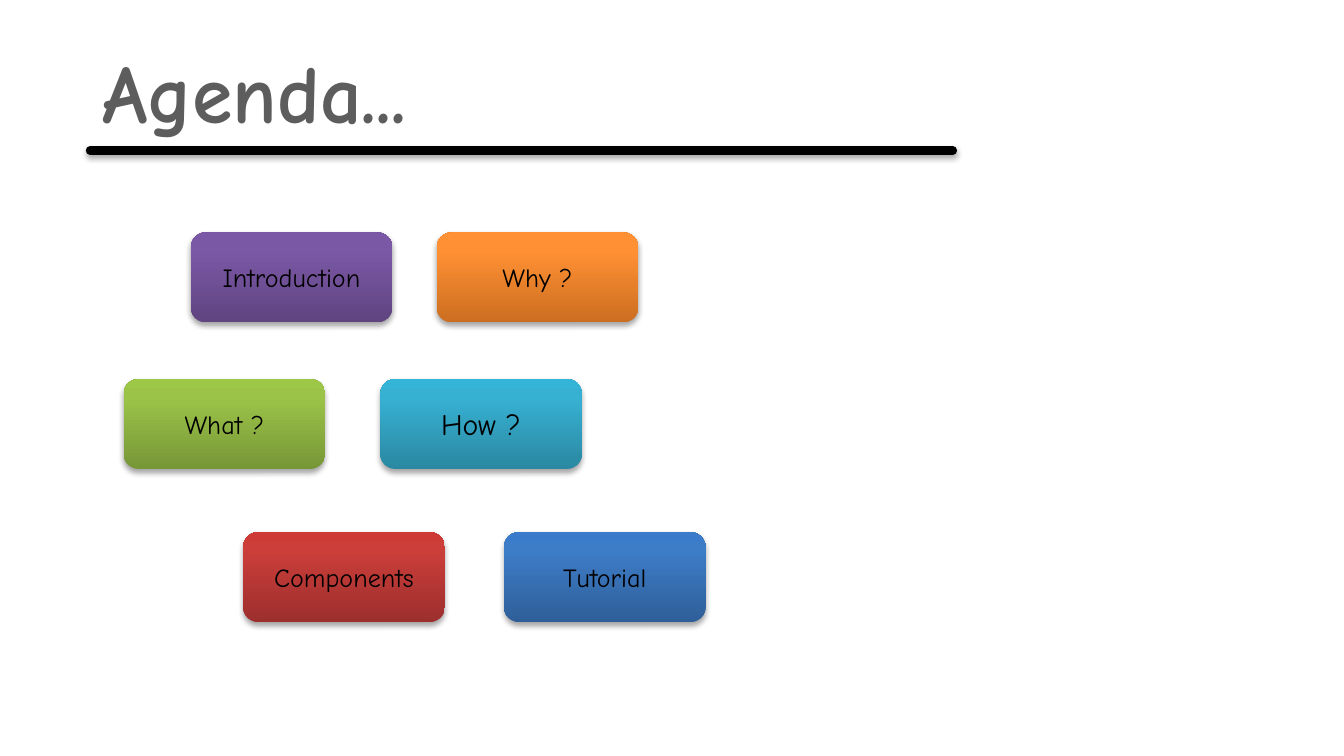
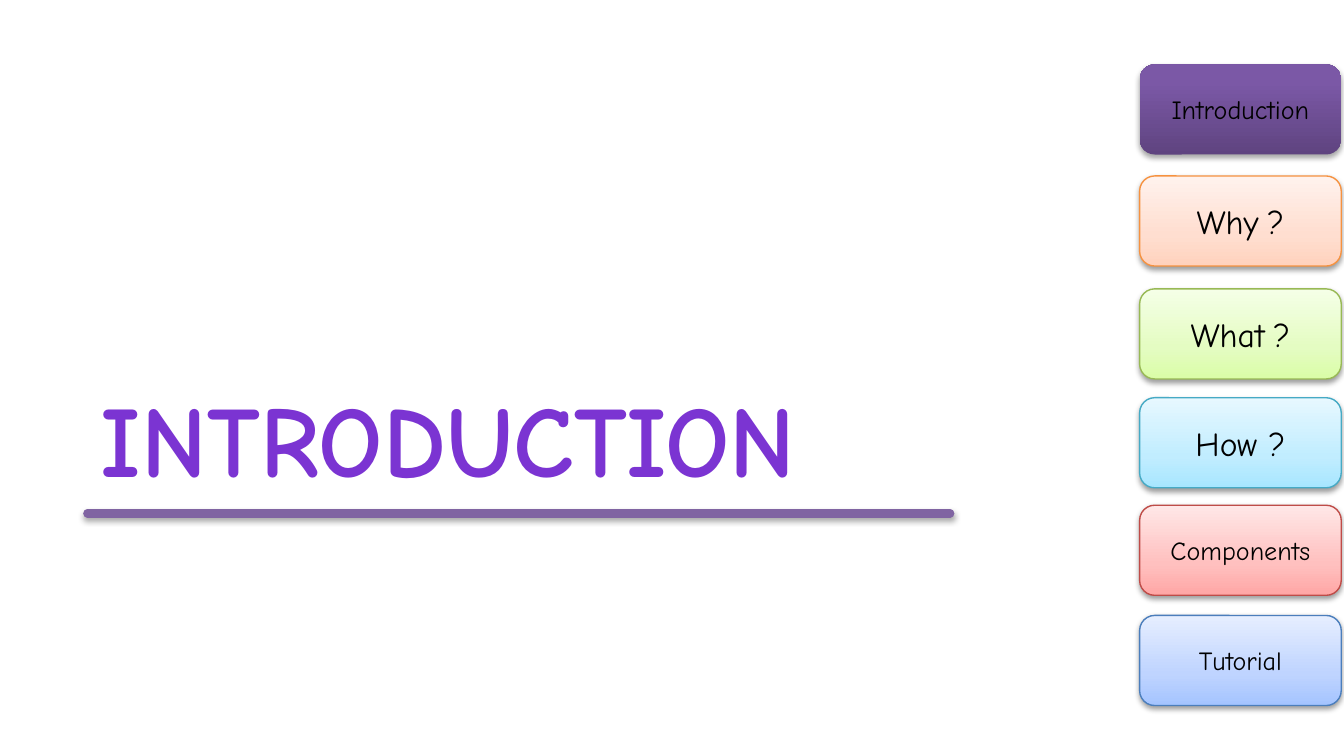
from copy import deepcopy

from lxml import etree
from pptx import Presentation
from pptx.dml.color import RGBColor
from pptx.enum.shapes import MSO_CONNECTOR, MSO_SHAPE
from pptx.enum.text import MSO_ANCHOR, MSO_AUTO_SIZE, PP_ALIGN
from pptx.oxml.ns import qn
from pptx.util import Inches, Pt

STRAIGHT = MSO_CONNECTOR.STRAIGHT
ROUNDED = MSO_SHAPE.ROUNDED_RECTANGLE
TOP, MIDDLE = MSO_ANCHOR.TOP, MSO_ANCHOR.MIDDLE
LEFT, CENTER = PP_ALIGN.LEFT, PP_ALIGN.CENTER
GROW = MSO_AUTO_SIZE.SHAPE_TO_FIT_TEXT

SLIDE_WIDTH = Inches(10)
SLIDE_HEIGHT = SLIDE_WIDTH * 9 // 16

FONT = "Comic Neue"
BLACK = RGBColor(0x00, 0x00, 0x00)
GRAY = RGBColor(0x5D, 0x5D, 0x5D)
VIOLET = RGBColor(0x7B, 0x34, 0xD2)
MUTED_VIOLET = RGBColor(0x80, 0x64, 0xA2)

STRONG_STOPS = (0, 0.8, 1)
PALE_STOPS = (0, 0.35, 1)


def palette(*codes):
    return [RGBColor.from_string(code) for code in codes]


STRONG = {
    "Introduction": palette("5F4480", "7B58A6", "7C57A8"),
    "Why ?": palette("CC6E20", "FF9034", "FF9136"),
    "What ?": palette("779737", "9BC348", "9DC746"),
    "How ?": palette("2A88A2", "37B1D2", "34B4D6"),
    "Components": palette("9C2F2D", "CB3E3A", "CE3B37"),
    "Tutorial": palette("2F5F99", "3D7CC7", "3A7CCB"),
}
PALE = {
    "Why ?": palette("FFD2BD", "FFDED0", "FFF2ED"),
    "What ?": palette("DAFDA7", "E4FCC2", "F5FFE7"),
    "How ?": palette("A7E6FF", "C1EDFF", "E7F8FF"),
    "Components": palette("FFA6A5", "FFC0BF", "FFE7E7"),
    "Tutorial": palette("A4C4FF", "BFD4FF", "E6EEFF"),
}
BORDER = dict(zip(PALE, palette("F69240", "98B955", "46AAC5", "BF4C48", "4B7EBC")))

AGENDA = [
    ([("Why ?", 14)], 3.25, 1.73),
    ([("Introduction", 14)], 1.42, 1.73),
    ([("How ?", 16)], 2.83, 2.82),
    ([("What ?", 14)], 0.92, 2.82),
    ([("Components", 14)], 1.81, 3.96),
    ([("Tutorial", 14)], 3.75, 3.96),
]
MENU_LEFT = 8.48
MENU = [
    ([("Introduction", 14)], 0.48),
    ([("Why", 18), (" ", 14), ("?", 18)], 1.31),
    ([("How ?", 18)], 2.96),
    ([("What", 18), (" ", 14), ("?", 18)], 2.15),
    ([("Components", 14)], 3.76),
    ([("Tutorial", 14)], 4.58),
]
CURRENT_TOPIC = "Introduction"
BUTTON_WIDTH, BUTTON_HEIGHT = 1.5, 0.67
RULE_LENGTH = 6.42


def cast_shadow(part, distance=1.8, opacity=35):
    effects = etree.SubElement(part._element.spPr, qn("a:effectLst"))
    outer = etree.SubElement(
        effects, qn("a:outerShdw"), blurRad=str(Pt(3.1)), dist=str(Pt(distance)),
        dir="5400000", rotWithShape="0")
    black = etree.SubElement(outer, qn("a:srgbClr"), val="000000")
    etree.SubElement(black, qn("a:alpha"), val=str(opacity * 1000))


def fill_gradient(button, colors, positions):
    button.fill.gradient()
    button.fill.gradient_angle = 90
    stop_list = button._element.spPr.find(".//" + qn("a:gsLst"))
    stop_list.insert(1, deepcopy(stop_list[0]))
    for stop, color, position in zip(button.fill.gradient_stops, colors, positions):
        stop.color.rgb = color
        stop.position = position


def format_run(run, size, color, bold=False):
    run.font.name = FONT
    run.font.size = Pt(size)
    run.font.bold = bold
    run.font.color.rgb = color


def add_button(slide, label, left, top, pale=False):
    topic = "".join(words for words, size in label)
    button = slide.shapes.add_shape(
        ROUNDED, Inches(left), Inches(top), Inches(BUTTON_WIDTH), Inches(BUTTON_HEIGHT))
    if pale:
        fill_gradient(button, PALE[topic], PALE_STOPS)
        button.line.color.rgb = BORDER[topic]
        button.line.width = Pt(0.75)
        cast_shadow(button, 1.6, 38)
    else:
        fill_gradient(button, STRONG[topic], STRONG_STOPS)
        button.line.fill.background()
        cast_shadow(button)
    button.text_frame.vertical_anchor = MIDDLE
    paragraph = button.text_frame.paragraphs[0]
    paragraph.alignment = CENTER
    for words, size in label:
        run = paragraph.add_run()
        run.text = words
        format_run(run, size, BLACK)


def add_titled_slide(deck, heading, box, size, color, rule_start, rule_color):
    slide = deck.slides.add_slide(deck.slide_layouts[5])
    title = slide.shapes.title
    title.left, title.top, title.width, title.height = map(Inches, box)
    frame = title.text_frame
    frame.text = heading
    frame.word_wrap = True
    frame.auto_size = GROW
    frame.vertical_anchor = TOP
    frame.paragraphs[0].alignment = LEFT
    format_run(frame.paragraphs[0].runs[0], size, color, bold=True)

    left, top = rule_start
    rule = slide.shapes.add_connector(
        STRAIGHT, Inches(left), Inches(top), Inches(left + RULE_LENGTH), Inches(top))
    rule.line.color.rgb = rule_color
    rule.line.width = Pt(4.5)
    rule.line._ln.set("cap", "rnd")
    cast_shadow(rule)
    return slide


def main():
    deck = Presentation()
    deck.slide_width, deck.slide_height = SLIDE_WIDTH, SLIDE_HEIGHT

    agenda = add_titled_slide(
        deck, "Agenda...", (0.66, 0.26, 5.41, 0.84), 44, GRAY, (0.67, 1.12), BLACK)
    for label, left, top in AGENDA:
        add_button(agenda, label, left, top)

    section = add_titled_slide(
        deck, "INTRODUCTION", (0.65, 2.75, 7.1, 1.01), 54, VIOLET, (0.65, 3.82), MUTED_VIOLET)
    for label, top in MENU:
        add_button(section, label, MENU_LEFT, top, pale=label[0][0] != CURRENT_TOPIC)

    deck.save("out.pptx")


if __name__ == "__main__":
    main()
